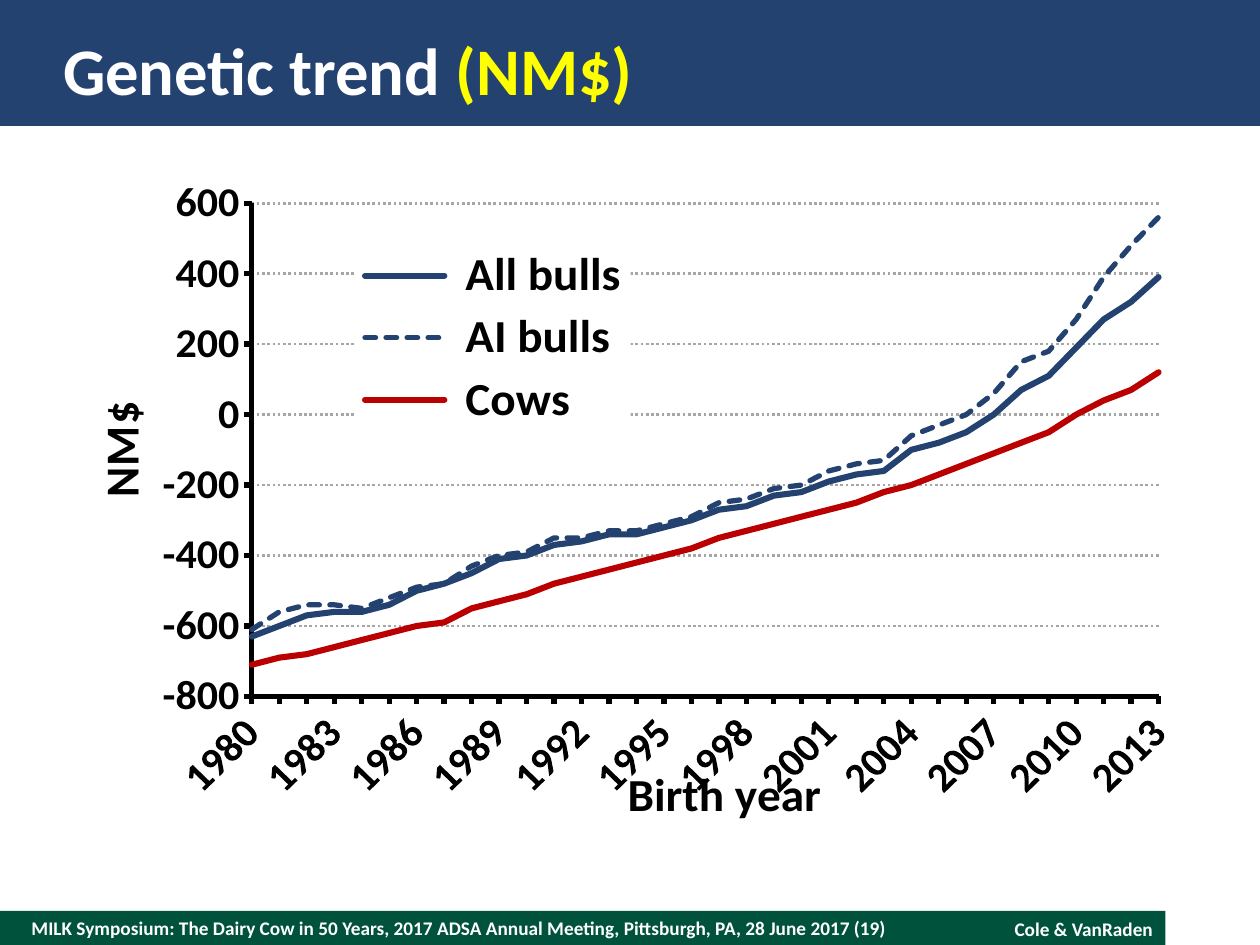
from dataclasses import dataclass

from pptx import Presentation
from pptx.chart.data import CategoryChartData
from pptx.dml.color import RGBColor
from pptx.enum.chart import XL_AXIS_CROSSES, XL_CHART_TYPE, XL_LEGEND_POSITION, XL_TICK_LABEL_POSITION, XL_TICK_MARK
from pptx.enum.dml import MSO_LINE
from pptx.enum.shapes import MSO_SHAPE
from pptx.enum.text import MSO_ANCHOR, PP_ALIGN
from pptx.oxml import parse_xml
from pptx.oxml.ns import nsdecls, qn
from pptx.util import Pt

LINE, RECTANGLE = XL_CHART_TYPE.LINE, MSO_SHAPE.RECTANGLE
LEFT, RIGHT, MIDDLE = PP_ALIGN.LEFT, PP_ALIGN.RIGHT, MSO_ANCHOR.MIDDLE
TOP = MSO_ANCHOR.TOP
DASHED, DOTTED = MSO_LINE.SQUARE_DOT, MSO_LINE.ROUND_DOT
OUTSIDE, LOW = XL_TICK_MARK.OUTSIDE, XL_TICK_LABEL_POSITION.LOW
LEGEND_RIGHT, MINIMUM = XL_LEGEND_POSITION.RIGHT, XL_AXIS_CROSSES.MINIMUM
LAYOUT_TITLE_ONLY = 5


@dataclass(frozen=True)
class Theme:
    font: str = "Calibri"
    navy: str = "244270"
    green: str = "00523C"
    red: str = "BA0000"
    yellow: str = "FFFF00"
    white: str = "FFFFFF"
    black: str = "000000"
    gray: str = "A6A6A6"
    title_size: float = 38
    label_size: float = 27
    tick_size: float = 24
    footer_size: float = 11


THEME = Theme()
YEARS = [str(year) for year in range(1980, 2014)]
# Name, colour, line width, dash style, values
TRENDS = [
    (" All bulls", THEME.navy, 3.5, None,
     [-630, -600, -570, -560, -560, -540, -500, -480, -450, -410, -400, -370,
      -360, -340, -340, -320, -300, -270, -260, -230, -220, -190, -170, -160,
      -100, -80, -50, 0, 70, 110, 190, 270, 320, 390]),
    (" AI bulls", THEME.navy, 3, DASHED,
     [-610, -560, -540, -540, -550, -520, -490, -480, -430, -400, -390, -350,
      -350, -330, -330, -310, -290, -250, -240, -210, -200, -160, -140, -130,
      -60, -30, 0, 60, 150, 180, 270, 390, 480, 560]),
    (" Cows", THEME.red, 3.5, None,
     [-710, -690, -680, -660, -640, -620, -600, -590, -550, -530, -510, -480,
      -460, -440, -420, -400, -380, -350, -330, -310, -290, -270, -250, -220,
      -200, -170, -140, -110, -80, -50, 0, 40, 70, 120]),
]


def set_attributes(target, values):
    for name, value in values.items():
        setattr(target, name, value)


def place_chart_part(element, x, y, width=None, height=None, inner=False):
    """Give a chart part a manual layout in fractions of the chart area."""
    for old_layout in element.findall(qn("c:layout")):
        element.remove(old_layout)
    values = {"layoutTarget": "inner" if inner else None, "xMode": "edge",
              "yMode": "edge", "x": x, "y": y, "w": width, "h": height}
    parts = "".join(f'<c:{name} val="{value}"/>'
                    for name, value in values.items() if value is not None)
    layout = parse_xml(f'<c:layout {nsdecls("c")}><c:manualLayout>{parts}'
                       '</c:manualLayout></c:layout>')
    leading = (qn("c:tx"), qn("c:legendPos"))
    element.insert(sum(child.tag in leading for child in element), layout)


class SlideBuilder:
    def __init__(self, presentation, theme):
        self.theme = theme
        self.slide = presentation.slides.add_slide(
            presentation.slide_layouts[LAYOUT_TITLE_ONLY])

    def format_font(self, font, size, color):
        set_attributes(font, {"name": self.theme.font, "size": Pt(size), "bold": True})
        font.color.rgb = RGBColor.from_string(color)

    def format_line(self, line, color, width, dash=None):
        line.color.rgb = RGBColor.from_string(color)
        set_attributes(line, {"width": Pt(width), "dash_style": dash})

    def bar(self, left, top, width, height, color):
        shape = self.slide.shapes.add_shape(
            RECTANGLE, Pt(left), Pt(top), Pt(width), Pt(height))
        shape.shadow.inherit = False
        shape.fill.solid()
        shape.fill.fore_color.rgb = RGBColor.from_string(color)
        shape.line.fill.background()

    def fill_text(self, frame, runs, size, align=LEFT, anchor=MIDDLE, margins=(0, 0)):
        """Write (text, colour) runs; margins are horizontal and vertical."""
        side, edge = map(Pt, margins)
        set_attributes(frame, {"word_wrap": True, "vertical_anchor": anchor,
                               "margin_left": side, "margin_right": side,
                               "margin_top": edge, "margin_bottom": edge})
        paragraph = frame.paragraphs[0]
        paragraph.alignment = align
        for text, color in runs:
            run = paragraph.add_run()
            run.text = text
            self.format_font(run.font, size, color)

    def title(self, left, top, width, height, runs):
        title = self.slide.shapes.title
        set_attributes(title, {"left": Pt(left), "top": Pt(top),
                               "width": Pt(width), "height": Pt(height)})
        self.fill_text(title.text_frame, runs, self.theme.title_size)
        self.slide.shapes._spTree.append(title._element)  # in front of the header bar

    def footer(self, left, top, width, height, text, **text_format):
        box = self.slide.shapes.add_textbox(Pt(left), Pt(top), Pt(width), Pt(height))
        self.fill_text(box.text_frame, [(text, self.theme.white)],
                       self.theme.footer_size, **text_format)

    def axis(self, axis, title, x, y, title_rotation):
        theme = self.theme
        set_attributes(axis, {"major_tick_mark": OUTSIDE, "tick_label_position": LOW})
        self.format_line(axis.format.line, theme.black, 3)
        self.format_font(axis.tick_labels.font, theme.tick_size, theme.black)
        frame = axis.axis_title.text_frame
        frame.text = title
        self.format_font(frame.paragraphs[0].runs[0].font, theme.label_size, theme.black)
        element = axis.axis_title._element
        body = element.xpath(".//a:bodyPr")[0]
        body.set("rot", str(title_rotation * 60000))
        body.set("vert", "horz")
        place_chart_part(element, x, y)

    def legend(self, chart):
        chart.has_legend = True
        legend = chart.legend
        set_attributes(legend, {"position": LEGEND_RIGHT, "include_in_layout": False})
        self.format_font(legend.font, self.theme.label_size, self.theme.black)
        element = legend._element
        place_chart_part(element, 0.26, 0.1, 0.24, 0.3)
        element.find(qn("c:txPr")).addprevious(parse_xml(
            f'<c:spPr {nsdecls("c", "a")}><a:solidFill><a:srgbClr '
            f'val="{self.theme.white}"/></a:solidFill></c:spPr>'))

    def line_chart(self, left, top, width, height, categories, trends):
        theme = self.theme
        data = CategoryChartData()
        data.categories = categories
        for name, *_, values in trends:
            data.add_series(name, values)
        chart = self.slide.shapes.add_chart(
            LINE, Pt(left), Pt(top), Pt(width), Pt(height), data).chart
        chart.has_title = False
        self.format_font(chart.font, theme.tick_size, theme.black)
        for series, (_, color, weight, dash, _) in zip(chart.plots[0].series, trends):
            series.smooth = False
            self.format_line(series.format.line, color, weight, dash)
        chart.plots[0].vary_by_categories = False

        years, merit = chart.category_axis, chart.value_axis
        self.axis(years, "Birth year", 0.49, 0.9, 0)
        self.axis(merit, "NM$", 0.02, 0.34, -90)
        set_attributes(merit, {"minimum_scale": -800, "maximum_scale": 600,
                               "major_unit": 200, "has_major_gridlines": True,
                               "crosses": MINIMUM})
        self.format_line(merit.major_gridlines.format.line, theme.gray, 1.5, DOTTED)
        years._element.xpath("./c:txPr/a:bodyPr")[0].set("rot", str(-45 * 60000))
        last = years._element.find(qn("c:noMultiLvlLbl"))
        for tag, step in (("tickLblSkip", 3), ("tickMarkSkip", 1)):
            last.addprevious(parse_xml(f'<c:{tag} {nsdecls("c")} val="{step}"/>'))
        merit._element.find(qn("c:majorUnit")).addprevious(
            parse_xml(f'<c:crossBetween {nsdecls("c")} val="midCat"/>'))

        self.legend(chart)
        chart_space = chart._chartSpace
        for line in chart_space.xpath(".//c:ser/c:spPr/a:ln"):
            line.set("cap", "rnd")
        place_chart_part(chart_space.xpath(".//c:plotArea")[0],
                         0.17, 0.04, 0.79, 0.77, inner=True)


def main():
    presentation = Presentation()
    set_attributes(presentation, {"slide_width": Pt(720), "slide_height": Pt(540)})
    builder = SlideBuilder(presentation, THEME)
    builder.bar(0, 520.5, 666, 19.5, THEME.green)
    builder.bar(0, 0, 720, 72, THEME.navy)
    builder.footer(18, 520.5, 504, 19.5,
                   "MILK Symposium: The Dairy Cow in 50 Years, 2017 ADSA Annual "
                   "Meeting, Pittsburgh, PA, 28 June 2017 (19)")
    builder.footer(522, 520.5, 144, 21, "Cole & VanRaden",
                   align=RIGHT, anchor=TOP, margins=(7.2, 3.6))
    builder.title(36, 14.4, 648, 50.4,
                  [("Genetic trend ", THEME.white), ("(NM$)", THEME.yellow)])
    builder.line_chart(32.4, 101.5, 656, 377.3, YEARS, TRENDS)
    presentation.save("out.pptx")


if __name__ == "__main__":
    main()
